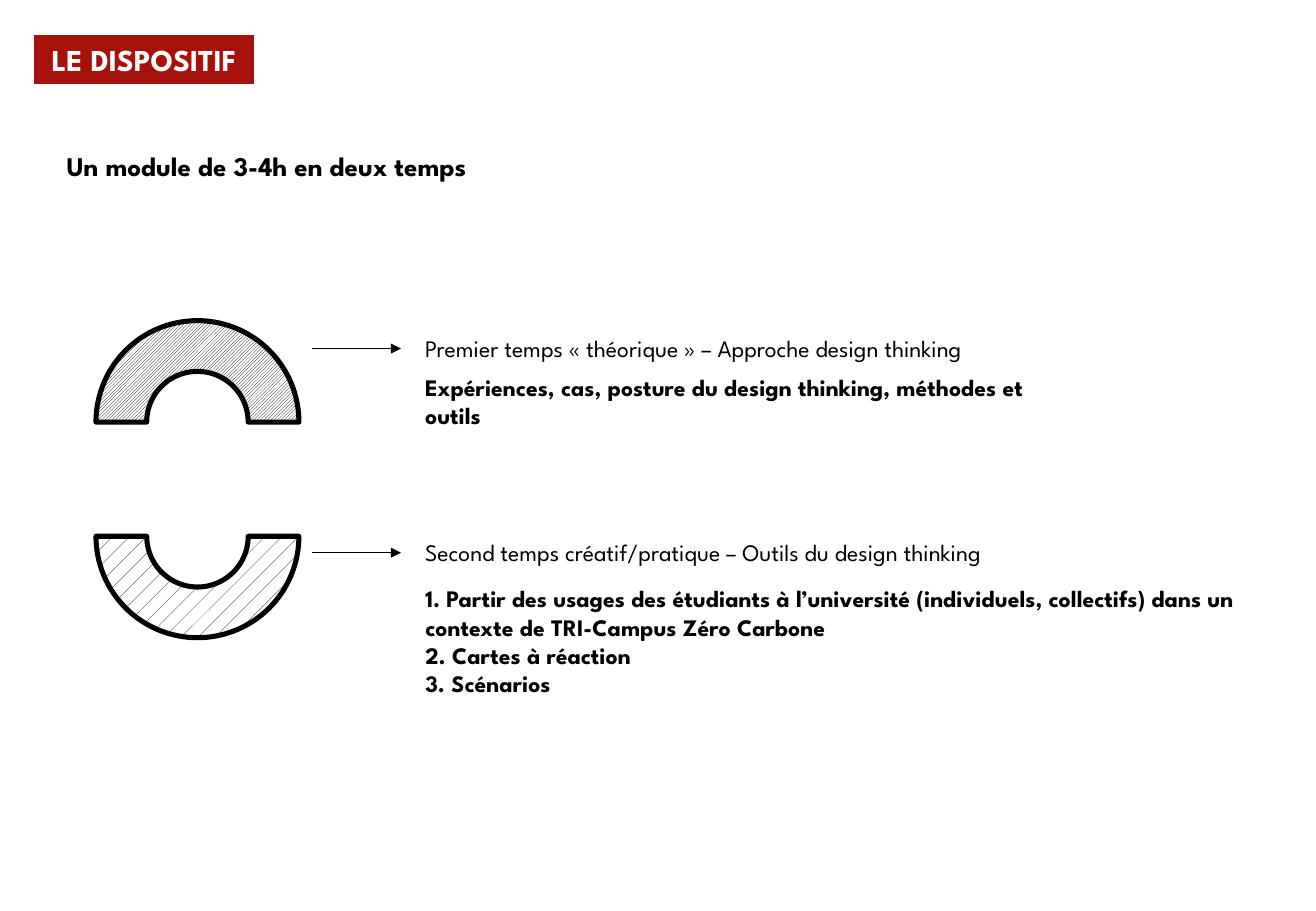
from pptx import Presentation
from pptx.dml.color import RGBColor
from pptx.enum.dml import MSO_PATTERN
from pptx.enum.shapes import MSO_CONNECTOR, MSO_SHAPE
from pptx.enum.text import MSO_ANCHOR, MSO_AUTO_SIZE, PP_ALIGN
from pptx.oxml.ns import qn
from pptx.util import Pt
from lxml.etree import SubElement

PX = 9144  # 100 px to the inch
BLACK, WHITE, RED = "000000", "FFFFFF", "A61209"


def rgb(code):
    return RGBColor.from_string(code)


class Deck:
    font = "League Spartan"

    def __init__(self, wide, high):
        self.prs = Presentation()
        self.prs.slide_width, self.prs.slide_height = wide * PX, high * PX
        self.slide = self.prs.slides.add_slide(self.prs.slide_layouts[1])
        self.shapes = self.slide.shapes

    def place(self, shape, box):
        shape.left, shape.top, shape.width, shape.height = (n * PX for n in box)

    def label(self, shape, text, size, bold=False, color=BLACK):
        frame = shape.text_frame
        frame.text = text
        frame.word_wrap = True
        frame.auto_size = MSO_AUTO_SIZE.NONE
        for para in frame.paragraphs:
            for run in para.runs:
                font = run.font
                font.name, font.size, font.bold = self.font, Pt(size), bold
                font.color.rgb = rgb(color)

    def title(self, text, box):
        shape = self.shapes.title
        self.place(shape, box)
        shape.fill.solid()
        shape.fill.fore_color.rgb = rgb(RED)
        self.label(shape, text, 18, True, WHITE)
        shape.text_frame.vertical_anchor = MSO_ANCHOR.MIDDLE
        shape.text_frame.paragraphs[0].alignment = PP_ALIGN.CENTER

    def steps(self, lines, box):
        """Fill the body placeholder with lines that carry their own numbers."""
        body = self.slide.placeholders[1]
        self.place(body, box)
        self.label(body, "\n".join(lines), 14, True)
        for para in body.text_frame.paragraphs:
            para.space_before = Pt(0)
            props = para._p.get_or_add_pPr()
            props.set("marL", "0")
            props.set("indent", "0")
            SubElement(props, qn("a:buNone"))

    def text(self, text, box, size=14, bold=False):
        shape = self.shapes.add_textbox(*(n * PX for n in box))
        self.label(shape, text, size, bold)

    def arc(self, box, weave, turn=0):
        shape = self.shapes.add_shape(MSO_SHAPE.BLOCK_ARC, *(n * PX for n in box))
        shape.rotation = turn
        shape.shadow.inherit = False
        fill = shape.fill
        fill.patterned()
        fill.pattern = weave
        fill.fore_color.rgb, fill.back_color.rgb = rgb(BLACK), rgb(WHITE)
        shape.line.color.rgb = rgb(BLACK)
        shape.line.width = Pt(3)

    def arrow(self, left, right, y):
        link = self.shapes.add_connector(
            MSO_CONNECTOR.STRAIGHT, left * PX, y * PX, right * PX, y * PX)
        link.line.color.rgb = rgb(BLACK)
        link.line.width = Pt(0.75)
        props = link._element.spPr
        SubElement(props.find(qn("a:ln")), qn("a:tailEnd"), type="triangle")
        SubElement(props, qn("a:effectLst"))


def main():
    deck = Deck(1083, 750)
    deck.title("LE DISPOSITIF", (28, 29, 181, 40))
    deck.text("Un module de 3-4h en deux temps", (45, 118, 577, 37), 16, True)

    phases = [
        ("Premier temps « théorique » – Approche design thinking",
         270, 264, MSO_PATTERN.LIGHT_UPWARD_DIAGONAL, 0),
        ("Second temps créatif/pratique – Outils du design thinking",
         438, 358, MSO_PATTERN.PERCENT_5, 180),
    ]
    for head, top, rim, weave, turn in phases:
        deck.arc((79, rim, 167, 167), weave, turn)
        deck.arrow(257, 330, top + 17)
        deck.text(head, (340, top, 577, 34))

    deck.text("Expériences, cas, posture du design thinking, méthodes et outils",
              (340, 302, 554, 57), bold=True)
    deck.steps([
        "1. Partir des usages des étudiants à l’université (individuels, collectifs) "
        "dans un contexte de TRI-Campus Zéro Carbone",
        "2. Cartes à réaction",
        "3. Scénarios",
    ], (340, 476, 688, 128))
    deck.prs.save("out.pptx")


if __name__ == "__main__":
    main()
